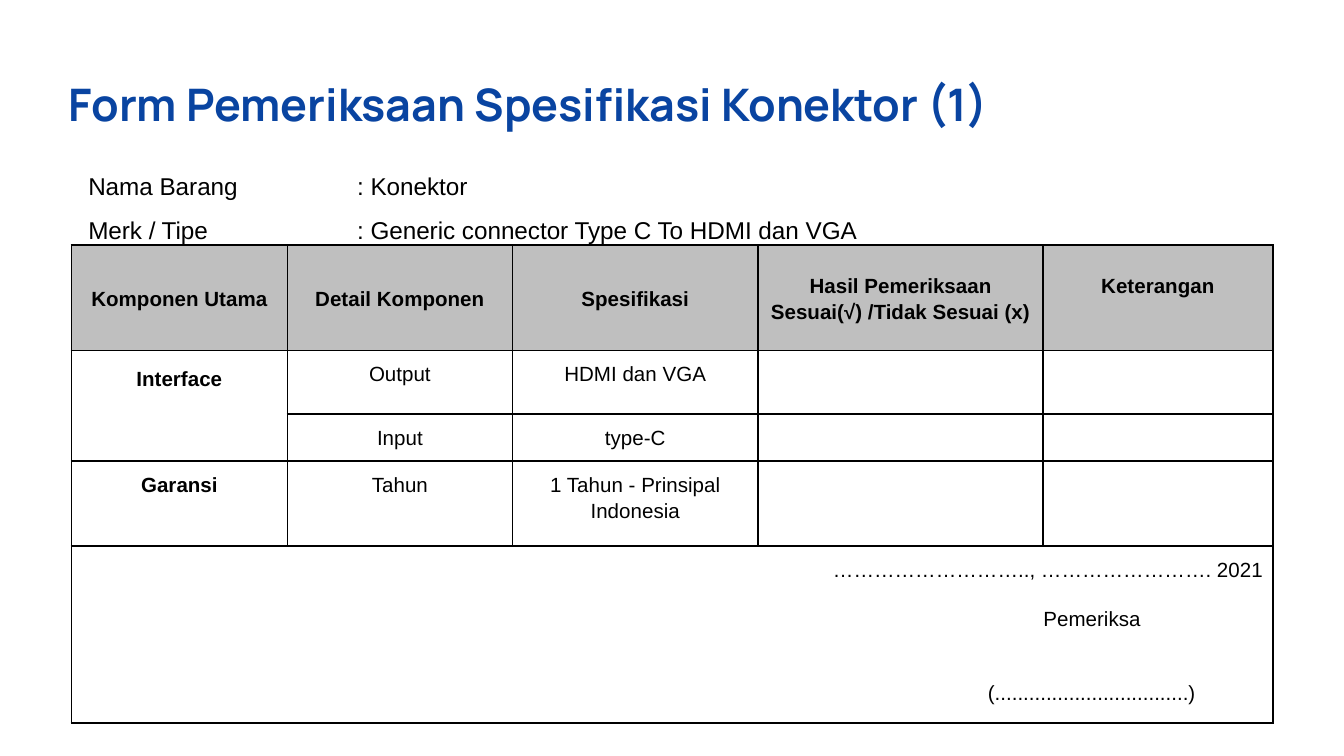
from dataclasses import dataclass, field

import pptx
import pptx.dml.color
import pptx.enum.text
import pptx.oxml.ns
import pptx.util
from lxml import etree

Pt = pptx.util.Pt
RGB = pptx.dml.color.RGBColor
ALIGN = pptx.enum.text.PP_ALIGN
ANCHOR = pptx.enum.text.MSO_ANCHOR
qn = pptx.oxml.ns.qn


@dataclass(frozen=True)
class Theme:
    title_color: RGB = RGB(0x09, 0x44, 0xA1)
    ink: RGB = RGB(0, 0, 0)
    header_fill: RGB = RGB(0xBF, 0xBF, 0xBF)
    title_font: str = "Manrope"
    body_font: str = "Arial"
    title_size: float = 24
    info_size: float = 13
    cell_size: float = 11
    border: float = 1


THEME = Theme()


@dataclass(frozen=True)
class Line:
    text: str
    size: float = THEME.cell_size
    bold: bool = False
    font: str = THEME.body_font
    color: RGB = THEME.ink
    align: ALIGN = ALIGN.CENTER
    spacing: float = 1.15
    before: float = 0
    indent: float = 0
    tab: float = 0


@dataclass(frozen=True)
class Entry:
    row: int
    column: int
    lines: list[Line]
    format: dict = field(default_factory=dict)


def apply(target: object, values: dict) -> None:
    for name, value in values.items():
        setattr(target, name, value)


def margins(left: float, top: float, right: float, bottom: float) -> dict:
    return {"margin_left": Pt(left), "margin_top": Pt(top),
            "margin_right": Pt(right), "margin_bottom": Pt(bottom)}


def write(frame: pptx.text.text.TextFrame, lines: list[Line]) -> None:
    for index, line in enumerate(lines):
        paragraph = frame.add_paragraph() if index else frame.paragraphs[0]
        apply(paragraph, {"alignment": line.align, "line_spacing": line.spacing})
        if line.before:
            paragraph.space_before = Pt(line.before)
        properties = paragraph._p.get_or_add_pPr()
        if line.indent:
            properties.set("marL", str(Pt(line.indent)))
        if line.tab:
            stops = etree.SubElement(properties, qn("a:tabLst"))
            etree.SubElement(stops, qn("a:tab"), pos=str(Pt(line.tab)), algn="l")
        run = paragraph.add_run()
        run.text = line.text
        apply(run.font, {"name": line.font, "size": Pt(line.size), "bold": line.bold})
        run.font.color.rgb = line.color


def add_text(slide: pptx.slide.Slide, left: float, top: float, width: float,
             height: float, lines: list[Line]) -> None:
    frame = slide.shapes.add_textbox(Pt(left), Pt(top), Pt(width), Pt(height)).text_frame
    apply(frame, {"word_wrap": True, **margins(7.2, 7.2, 7.2, 7.2)})
    write(frame, lines)


def add_borders(cell: pptx.table._Cell) -> None:
    properties = cell._tc.get_or_add_tcPr()
    for index, side in enumerate(("lnL", "lnR", "lnT", "lnB")):
        border = etree.Element(qn(f"a:{side}"), w=str(Pt(THEME.border)))
        fill = etree.SubElement(border, qn("a:solidFill"))
        etree.SubElement(fill, qn("a:srgbClr"), val=str(THEME.ink))
        properties.insert(index, border)


def add_form(slide: pptx.slide.Slide, left: float, top: float, widths: list[float],
             heights: list[float], entries: list[Entry]) -> None:
    form = slide.shapes.add_table(len(heights), len(widths), Pt(left), Pt(top),
                                  Pt(sum(widths)), Pt(sum(heights))).table
    apply(form, {"first_row": False, "horz_banding": False})
    for column, width in zip(form.columns, widths):
        column.width = Pt(width)
    for row, height in zip(form.rows, heights):
        row.height = Pt(height)
    for row_index, row in enumerate(form.rows):
        for cell in row.cells:
            apply(cell, margins(5, 0, 5, 0))
            if row_index == 0:
                cell.fill.solid()
                cell.fill.fore_color.rgb = THEME.header_fill
            else:
                cell.fill.background()
            add_borders(cell)
    # Interface covers two rows, the signature area the full width
    form.cell(1, 0).merge(form.cell(2, 0))
    last_row = len(heights) - 1
    form.cell(last_row, 0).merge(form.cell(last_row, len(widths) - 1))
    for entry in entries:
        cell = form.cell(entry.row, entry.column)
        apply(cell, {**margins(5, 5, 5, 5), **entry.format})
        write(cell.text_frame, entry.lines)


def main() -> None:
    deck = pptx.Presentation()
    apply(deck, {"slide_width": Pt(720), "slide_height": Pt(405)})
    slide = deck.slides.add_slide(deck.slide_layouts[6])

    # Title
    add_text(slide, 29.7, 34, 554, 44, [
        Line("Form Pemeriksaan Spesifikasi Konektor (1)", THEME.title_size, True,
             THEME.title_font, THEME.title_color, ALIGN.LEFT, 1.0)])

    # Item details
    details = ["Nama Barang\t: Konektor",
               "Merk / Tipe\t: Generic connector Type C To HDMI dan VGA"]
    add_text(slide, 40.2, 77, 475, 54, [
        Line(text, THEME.info_size, align=ALIGN.JUSTIFY, spacing=1.5, tab=144)
        for text in details])

    # Inspection form
    headings = ["Komponen Utama", "Detail Komponen", "Spesifikasi",
                "Hasil Pemeriksaan Sesuai(√) /Tidak Sesuai (x)", "Keterangan"]
    header = [Entry(0, column, [Line(text, bold=True)],
                    {"vertical_anchor": ANCHOR.MIDDLE})
              for column, text in enumerate(headings)]
    header[-1].format["margin_bottom"] = Pt(19.5)
    components = [Entry(1, 0, [Line("Interface", bold=True)],
                        {"margin_top": Pt(7.2), "margin_bottom": Pt(7.2)}),
                  Entry(3, 0, [Line("Garansi", bold=True)])]
    specifications = [("Output", "HDMI dan VGA"), ("Input", "type-C"),
                      ("Tahun", "1 Tahun - Prinsipal Indonesia")]
    checks = [Entry(row, column, [Line(text)])
              for row, pair in enumerate(specifications, 1)
              for column, text in enumerate(pair, 1)]
    signature = Entry(4, 0, [
        Line("……………………….., ……………………. 2021", align=ALIGN.RIGHT),
        Line("Pemeriksa", before=12, indent=450),
        Line("(..................................)", before=26, indent=450)])
    add_form(slide, 38.2, 131.2, [115.8, 120.5, 131.7, 152.6, 123.1],
             [56.7, 33.8, 25.2, 45.8, 94.6],
             [*header, *components, *checks, signature])

    deck.save("out.pptx")


if __name__ == "__main__":
    main()
